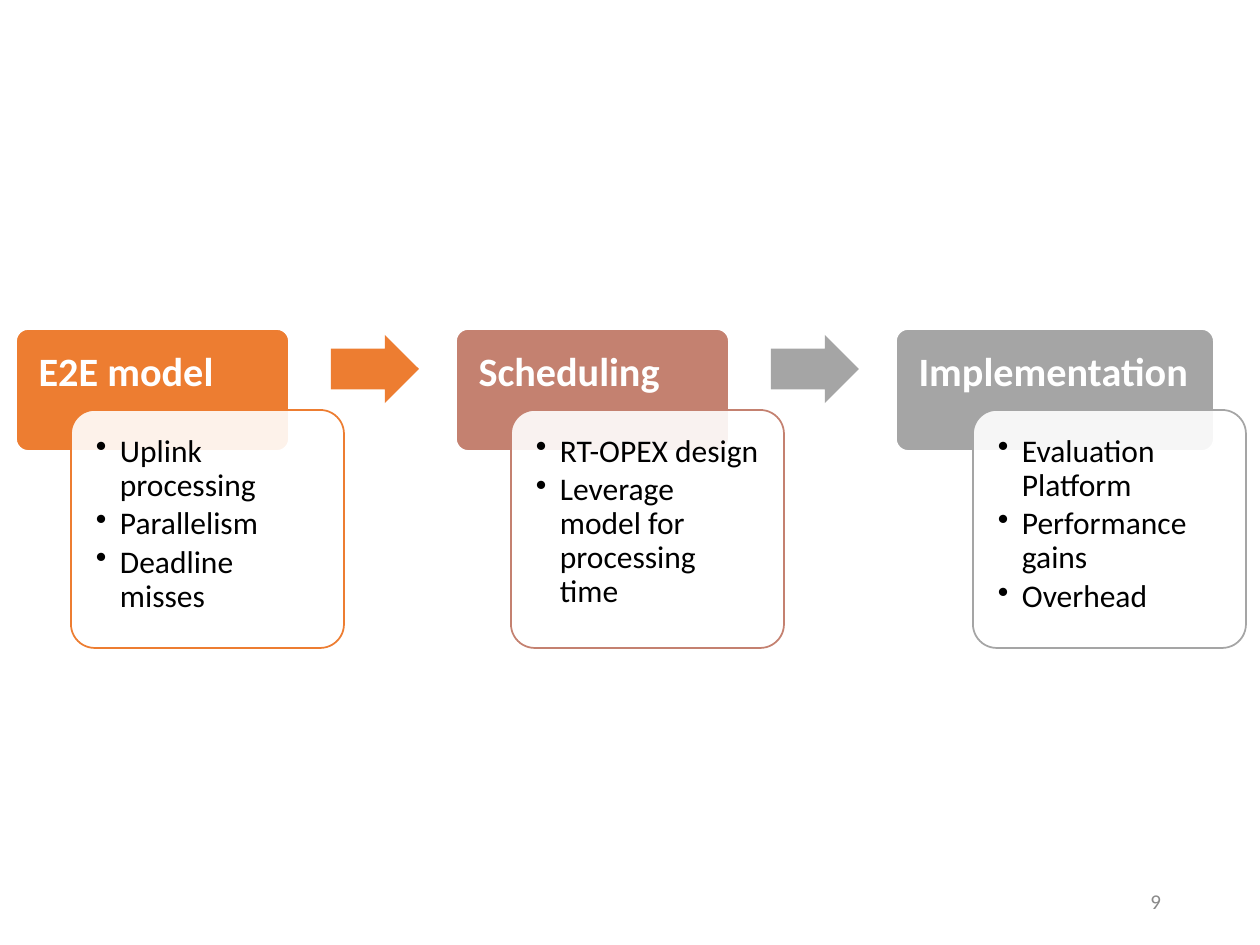
import dataclasses
import pptx
import pptx.util
import pptx.dml.color
import pptx.enum.shapes
import pptx.enum.text
import pptx.oxml
import pptx.oxml.ns

KIND = pptx.enum.shapes.MSO_SHAPE
ALIGN = pptx.enum.text.PP_ALIGN
ANCHOR = pptx.enum.text.MSO_ANCHOR


@dataclasses.dataclass(frozen=True)
class Theme:
    font: str = "Calibri"
    white: str = "FFFFFF"
    black: str = "000000"
    gray: str = "898989"
    hues: tuple = ("ED7D31", "C48170", "A5A5A5")
    head: int = 23
    body: int = 18
    foot: int = 12


THEME = Theme()

STEPS = (
    ("E2E model", 273, ("Uplink processing", "Parallelism", "Deadline misses")),
    ("Scheduling", 273, ("RT-OPEX design", "Leverage model for processing time")),
    ("Implementation", 318, ("Evaluation Platform", "Performance gains", "Overhead")),
)


def px(n):
    return round(n * 914400 / 126)


def color(hue):
    return pptx.dml.color.RGBColor.from_string(hue)


def element(owner, tag, **attrs):
    child = pptx.oxml.parse_xml(f"<{tag} {pptx.oxml.ns.nsdecls('a')}/>")
    for name, value in attrs.items():
        child.set(name, str(value))
    owner.append(child)


def write(shape, lines, size, hue, bold=False, align=ALIGN.LEFT, anchor=ANCHOR.TOP,
          inset=(13, 6, 13, 6), spacing=1, after=0, bullet=0):
    frame = shape.text_frame
    frame.word_wrap = True
    frame.vertical_anchor = anchor
    (frame.margin_left, frame.margin_top,
     frame.margin_right, frame.margin_bottom) = map(px, inset)
    for i, line in enumerate(lines):
        para = frame.paragraphs[0] if i == 0 else frame.add_paragraph()
        para.alignment = align
        para.line_spacing = spacing
        para.space_after = pptx.util.Pt(after)
        if bullet:
            props = para._p.get_or_add_pPr()
            props.set("marL", str(px(bullet)))
            props.set("indent", str(-px(bullet)))
            element(props, "a:buChar", char="•")
        run = para.add_run()
        run.text = line
        run.font.name = THEME.font
        run.font.size = pptx.util.Pt(size)
        run.font.bold = bold
        run.font.color.rgb = color(hue)


def draw(slide, kind, box, fill, line=None, adjust=(0.1,), alpha=None):
    shape = slide.shapes.add_shape(kind, *map(px, box))
    shape.shadow.inherit = False
    for i, value in enumerate(adjust):
        shape.adjustments[i] = value
    shape.fill.solid()
    shape.fill.fore_color.rgb = color(fill)
    if alpha:
        paint = shape._element.spPr.find(pptx.oxml.ns.qn("a:solidFill"))
        element(paint[0], "a:alpha", val=alpha * 1000)
    if line:
        shape.line.color.rgb = color(line)
        shape.line.width = pptx.util.Pt(1)
    else:
        shape.line.fill.background()
    return shape


def step(slide, box, title, items, hue):
    left, top, wide, tall = box
    head = draw(slide, KIND.ROUNDED_RECTANGLE, box, hue, THEME.white)
    write(head, [title], THEME.head, THEME.white, bold=True,
          inset=(19, 19, 12, 12), spacing=0.9)
    side = 273
    shift = 55 + (wide - side) // 2
    card = draw(slide, KIND.ROUNDED_RECTANGLE, (left + shift, top + 81, side, 238),
                THEME.white, hue, alpha=90)
    write(card, items, THEME.body, THEME.black, inset=(18, 18, 18, 18),
          spacing=0.9, after=2.7, bullet=24)


def arrow(slide, box, hue):
    draw(slide, KIND.RIGHT_ARROW, box, hue, adjust=(0.6, 0.5))


def flow(slide, box):
    left, top, pitch, tall = box
    for i, (title, wide, items) in enumerate(STEPS):
        x = left + i * pitch
        step(slide, (x, top, wide, tall), title, items, THEME.hues[i])
        if i < len(STEPS) - 1:
            arrow(slide, (x + 315, top + 6, 88, 68), THEME.hues[i * 2])


def footer(slide, box):
    note = slide.shapes.add_textbox(*map(px, box))
    write(note, ["9"], THEME.foot, THEME.gray, align=ALIGN.RIGHT, anchor=ANCHOR.MIDDLE)


def main():
    deck = pptx.Presentation()
    deck.slide_width = pptx.util.Inches(10)
    deck.slide_height = pptx.util.Inches(7.5)
    slide = deck.slides.add_slide(deck.slide_layouts[6])
    flow(slide, (16, 329, 440, 122))
    footer(slide, (890, 876, 284, 50))
    deck.save("out.pptx")


if __name__ == "__main__":
    main()
